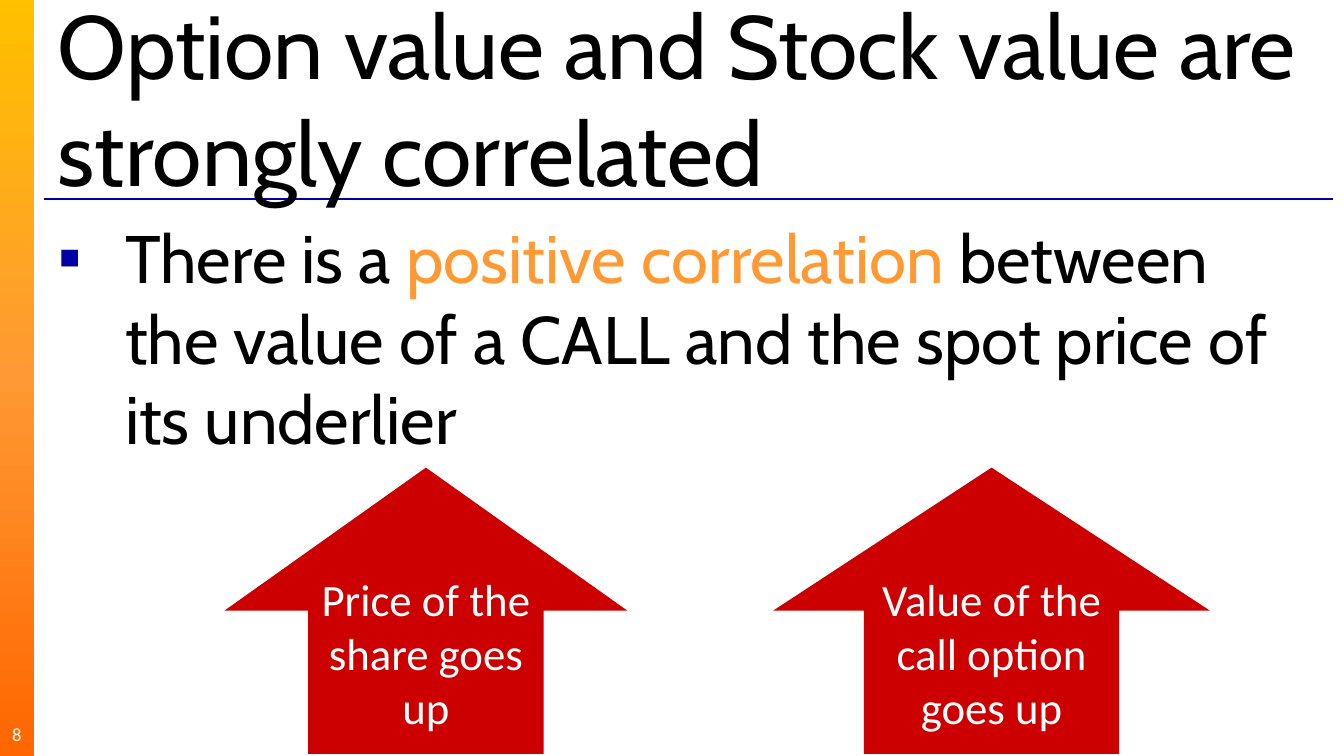
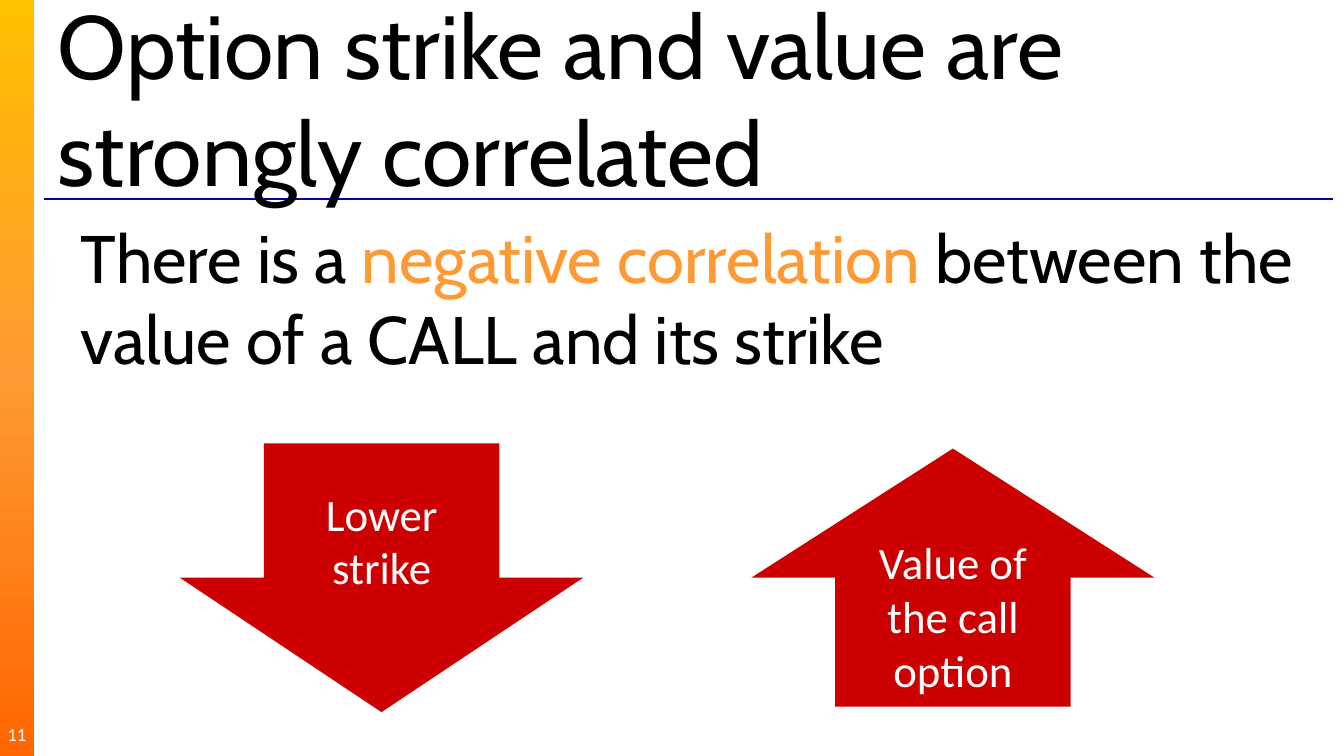
from copy import deepcopy

from lxml.etree import SubElement
from pptx import Presentation
from pptx.dml.color import RGBColor
from pptx.enum.shapes import MSO_CONNECTOR, MSO_SHAPE
from pptx.enum.text import MSO_ANCHOR, MSO_AUTO_SIZE, PP_ALIGN
from pptx.oxml.ns import qn
from pptx.util import Cm, Pt

WIDTH, HEIGHT = 25.4, 14.29
BAND_WIDTH = 0.64
LEFT = 0.84
RULE_TOP = 3.76
BAND_STOPS = [(0, "FFC000"), (0.5, "FF9933"), (1, "FF6600")]
BLACK, WHITE, RED, ORANGE, BLUE = "000000", "FFFFFF", "CC0000", "FF9933", "0000A5"
TITLE_FONT, LABEL_FONT = "Cabin", "Calibri"


def rgb(value):
    return RGBColor.from_string(value)


def place(shape, left, top, width, height):
    shape.left, shape.top = Cm(left), Cm(top)
    shape.width, shape.height = Cm(width), Cm(height)


def fill_plain(shape, color):
    shape.fill.solid()
    shape.fill.fore_color.rgb = rgb(color)


def add_span(para, text, size=24, font=LABEL_FONT, color=WHITE):
    span = para.add_run()
    span.text = text
    span.font.size = Pt(size)
    span.font.name = font
    span.font.color.rgb = rgb(color)


def add_label(shape, text, **style):
    """Centre one paragraph of text in a shape."""
    frame = shape.text_frame
    frame.word_wrap = True
    frame.vertical_anchor = MSO_ANCHOR.MIDDLE
    para = frame.paragraphs[0]
    para.alignment = PP_ALIGN.CENTER
    add_span(para, text, **style)


def add_plain_shape(shapes, kind, left, top, width, height):
    shape = shapes.add_shape(kind, Cm(left), Cm(top), Cm(width), Cm(height))
    shape.shadow.inherit = False
    shape.line.fill.background()
    fill_plain(shape, RED)
    return shape


def add_arrow(shapes, left, top, width, height):
    arrow = add_plain_shape(shapes, MSO_SHAPE.UP_ARROW, left, top, width, height)
    arrow.adjustments[0] = 0.584
    arrow.adjustments[1] = 0.5
    return arrow


def add_down_arrow(page, text, left, top, width, height):
    """Group a turned arrow with an upright label."""
    group = page.shapes.add_group_shape()
    add_arrow(group.shapes, left, top, width, height).rotation = 180
    label = add_plain_shape(group.shapes, MSO_SHAPE.RECTANGLE,
                            left + 1.81, top + 0.56, 4.01, 2.54)
    add_label(label, text)


def add_band(page):
    band = add_plain_shape(page.shapes, MSO_SHAPE.RECTANGLE, 0, 0, BAND_WIDTH, HEIGHT)
    band.fill.gradient()
    band.fill.gradient_angle = 270
    stop_list = band.element.spPr.find(".//" + qn("a:gsLst"))
    stop_list.insert(1, deepcopy(stop_list[0]))
    for stop, (position, color) in zip(band.fill.gradient_stops, BAND_STOPS):
        stop.position = position
        stop.color.rgb = rgb(color)
    return band


def add_rule(page):
    rule = page.shapes.add_connector(MSO_CONNECTOR.STRAIGHT, Cm(LEFT), Cm(RULE_TOP),
                                     Cm(25.2), Cm(RULE_TOP))
    rule.line.color.rgb = rgb(BLUE)
    rule.line.width = Pt(0.75)
    SubElement(rule.element.spPr, qn("a:effectLst"))
    return rule


def add_number(page, number):
    box = page.shapes.add_textbox(0, Cm(13.49), Cm(BAND_WIDTH), Cm(0.76))
    frame = box.text_frame
    frame.margin_left = frame.margin_right = frame.margin_top = frame.margin_bottom = 0
    add_label(box, str(number), size=10)


def set_title(page, text):
    title = page.shapes.title
    place(title, LEFT, 0.15, 24.33, 3.38)
    fill_plain(title, WHITE)
    frame = title.text_frame
    frame.auto_size = MSO_AUTO_SIZE.NONE
    frame.vertical_anchor = MSO_ANCHOR.MIDDLE
    para = frame.paragraphs[0]
    para.alignment = PP_ALIGN.LEFT
    add_span(para, text, size=48, font=TITLE_FONT, color=BLACK)


def set_bullet(para, bullet, indent):
    properties = para._p.get_or_add_pPr()
    properties.set("marL", str(Cm(indent)))
    properties.set("indent", str(-Cm(indent)))
    if bullet:
        color = SubElement(properties, qn("a:buClr"))
        SubElement(color, qn("a:srgbClr"), val=BLUE)
        SubElement(properties, qn("a:buChar"), char="▪")
    else:
        SubElement(properties, qn("a:buNone"))


def set_body(page, before, key, after, left=LEFT, width=24.13, bullet=True):
    body = page.placeholders[1]
    place(body, left, 3.96, width, 10.31)
    frame = body.text_frame
    frame.auto_size = MSO_AUTO_SIZE.NONE
    para = frame.paragraphs[0]
    set_bullet(para, bullet, 1.27 if bullet else 0)
    para.space_before = Pt(0)
    for text, color in [(before, BLACK), (key, ORANGE), (after, BLACK)]:
        add_span(para, text, size=36, font=TITLE_FONT, color=color)


def add_page(deck, title, number):
    page = deck.slides.add_slide(deck.slide_layouts[1])
    set_title(page, title)
    for backdrop in (add_rule(page), add_band(page)):
        page.shapes.element.insert(2, backdrop.element)
    add_number(page, number)
    return page


def main():
    deck = Presentation()
    deck.slide_width, deck.slide_height = Cm(WIDTH), Cm(HEIGHT)

    page = add_page(deck, "Option value and Stock value are strongly correlated", 8)
    set_body(page, "There is a ", "positive correlation ",
             "between the value of a CALL and the spot price of its underlier")
    add_label(add_arrow(page.shapes, 4.24, 8.84, 7.62, 5.41), "Price of the share goes up")
    add_label(add_arrow(page.shapes, 14.61, 8.84, 8.26, 5.41),
              "Value of the call option goes up")

    page = add_page(deck, "Option strike and value are strongly correlated", 11)
    set_body(page, "There is a ", "negative correlation ",
             "between the value of a CALL and its strike",
             left=1.27, width=23.7, bullet=False)
    add_label(add_arrow(page.shapes, 14.2, 8.48, 7.62, 4.88), "Value of the call option")
    add_down_arrow(page, "Lower strike", 3.4, 8.38, 7.62, 5.08)

    deck.save("out.pptx")


if __name__ == "__main__":
    main()
